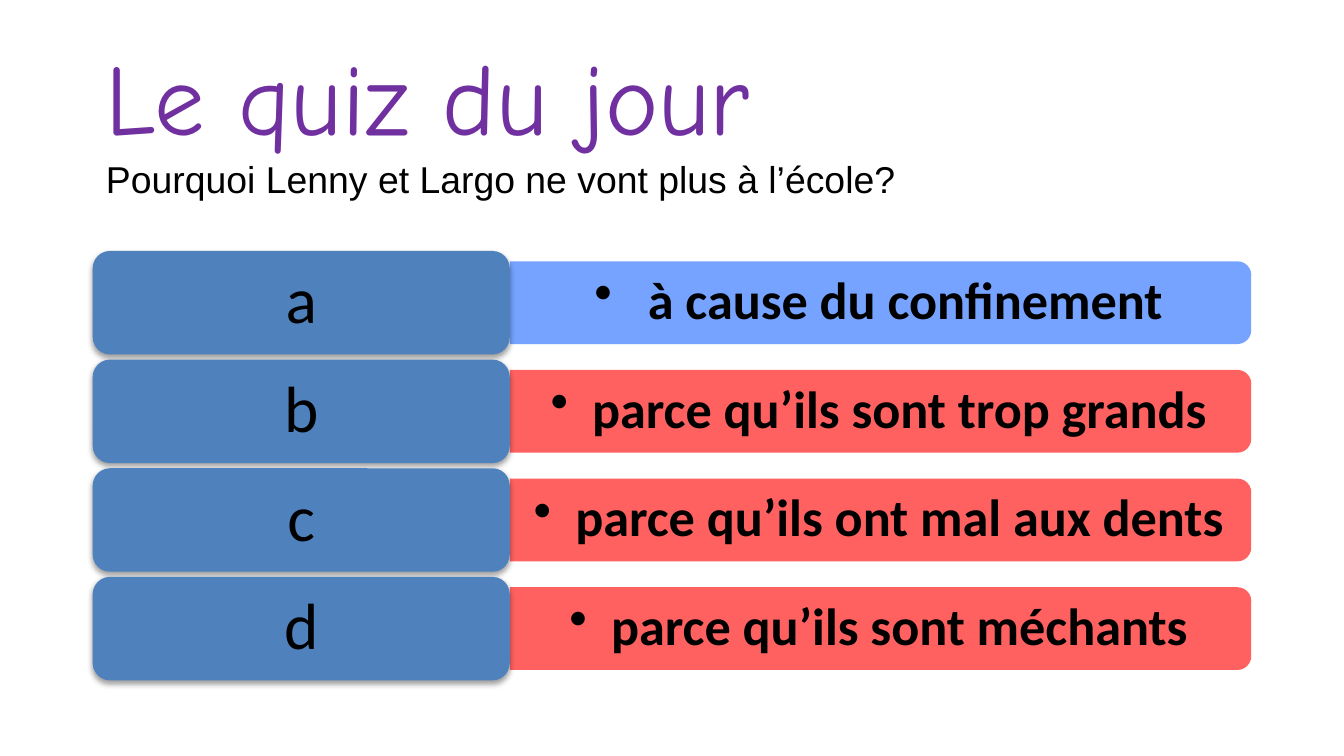
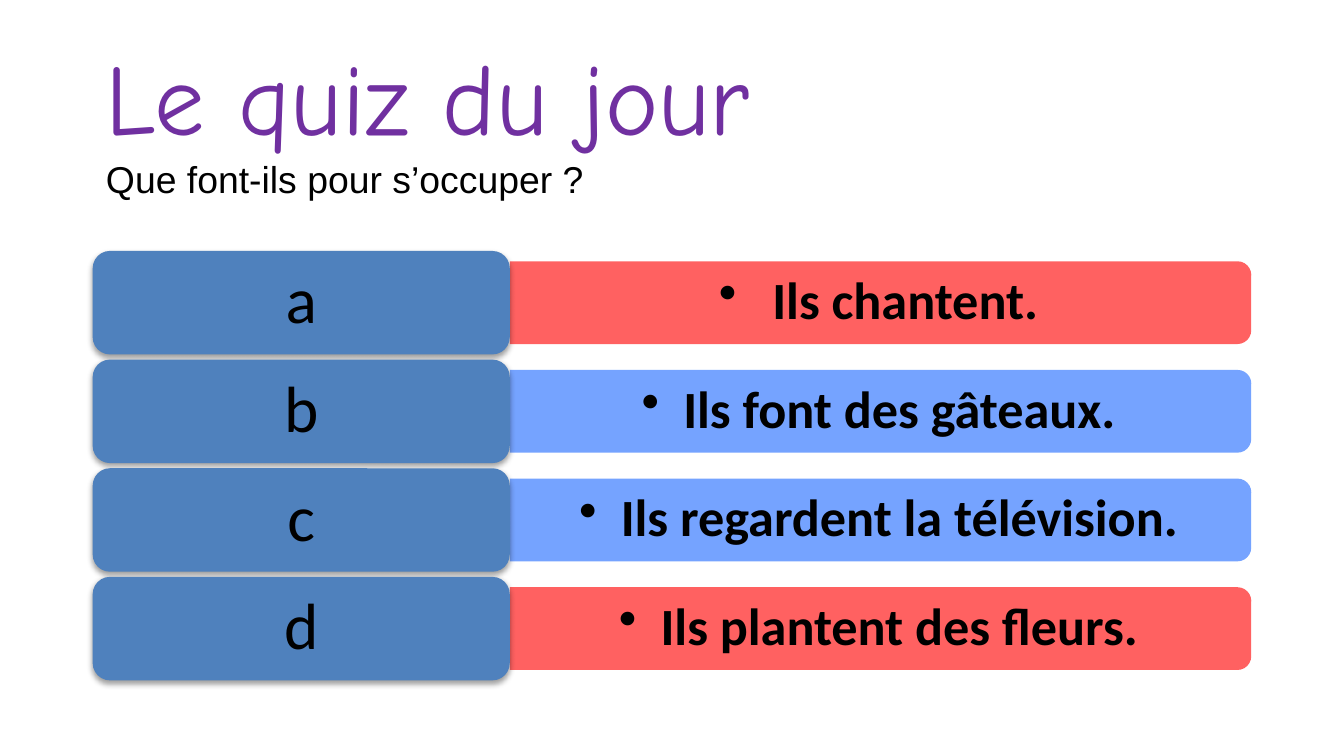
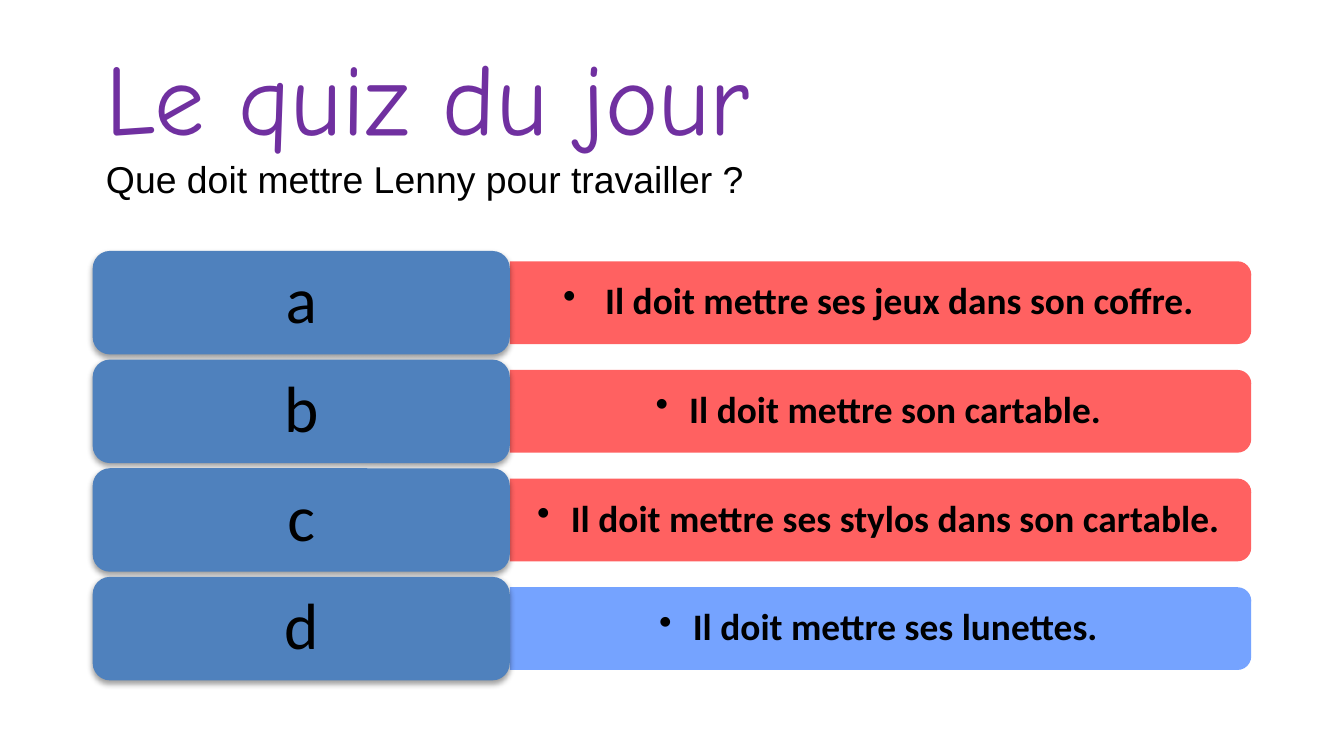
import dataclasses

import lxml.etree
import pptx
import pptx.dml.color
import pptx.enum.shapes
import pptx.enum.text
import pptx.oxml.ns
import pptx.util

Inches = pptx.util.Inches
Pt = pptx.util.Pt
RGBColor = pptx.dml.color.RGBColor
Shapes = pptx.enum.shapes.MSO_SHAPE
Align = pptx.enum.text.PP_ALIGN

PURPLE = RGBColor(0x70, 0x30, 0xA0)
BLACK = RGBColor(0x00, 0x00, 0x00)
LABEL_BLUE = RGBColor(0x4F, 0x81, 0xBD)
RIGHT_BLUE = RGBColor(0x66, 0x99, 0xFF)
WRONG_RED = RGBColor(0xFF, 0x50, 0x50)

SLIDE_WIDTH, SLIDE_HEIGHT = 10, 5.625
TITLE = "Le quiz du jour"
LETTERS = "abcd"
LABEL_SHARE = 0.36  # of the row width
BAR_SHARE = 0.8  # of the row height
GAP_SHARE = 0.05  # of the row height
LABEL_PADDING = 0.04


@dataclasses.dataclass
class Box:
    left: float
    top: float
    width: float
    height: float

    def emu(self):
        return [Inches(n) for n in (self.left, self.top, self.width, self.height)]

    def inset(self, x, y):
        return Box(self.left + x, self.top + y, self.width - 2 * x, self.height - 2 * y)

    def quarter_turned(self):
        """Box that covers this one once its shape is rotated by 90 degrees."""
        shift = (self.width - self.height) / 2
        return Box(self.left + shift, self.top - shift, self.height, self.width)


@dataclasses.dataclass
class Question:
    text: str
    answers: list
    correct: str
    size: int = 28
    inset: float = 0.12
    indent: float = 0.31


TITLE_BOX = Box(0.069 * SLIDE_WIDTH, 0.036 * SLIDE_HEIGHT,
                0.862 * SLIDE_WIDTH, 0.24 * SLIDE_HEIGHT)
ANSWERS_BOX = Box(TITLE_BOX.left, 0.332 * SLIDE_HEIGHT,
                  TITLE_BOX.width, 0.568 * SLIDE_HEIGHT)

QUESTIONS = [
    Question("Pourquoi Lenny et Largo ne vont plus à l’école?",
             [" à cause du confinement", "parce qu’ils sont trop grands",
              "parce qu’ils ont mal aux dents", "parce qu’ils sont méchants"], "a"),
    Question("Que font-ils pour s’occuper ?",
             [" Ils chantent.", "Ils font des gâteaux.",
              "Ils regardent la télévision.", "Ils plantent des fleurs."], "bc"),
    Question("Que doit mettre Lenny pour travailler ?",
             [" Il doit mettre ses jeux dans son coffre.", "Il doit mettre son cartable.",
              "Il doit mettre ses stylos dans son cartable.", "Il doit mettre ses lunettes."],
             "d", size=20, inset=0.08, indent=0.25),
]


def add_child(parent, tag, **attributes):
    child = lxml.etree.SubElement(parent, pptx.oxml.ns.qn(tag))
    for name, value in attributes.items():
        child.set(name, str(value))
    return child


def format_run(run, font, size, color, bold=False):
    run.font.name = font
    run.font.size = Pt(size)
    run.font.color.rgb = color
    run.font.bold = bold


def add_text(shapes, box, text, inset_x, inset_y):
    frame = shapes.add_textbox(*box.emu()).text_frame
    frame.word_wrap = True
    frame.vertical_anchor = pptx.enum.text.MSO_ANCHOR.MIDDLE
    frame.margin_left = frame.margin_right = Inches(inset_x)
    frame.margin_top = frame.margin_bottom = Inches(inset_y)
    frame.text = text
    return frame.paragraphs[0]


def add_row_text(shapes, box, text, size, inset, bold=False):
    paragraph = add_text(shapes, box, text, inset, inset / 2)
    paragraph.alignment = Align.CENTER
    paragraph.line_spacing = 0.9
    format_run(paragraph.runs[0], "Calibri", size, BLACK, bold)
    return paragraph


def add_filled(shapes, kind, box, color):
    shape = shapes.add_shape(kind, *box.emu())
    shape.shadow.inherit = False
    shape.fill.solid()
    shape.fill.fore_color.rgb = color
    shape.line.fill.background()
    return shape


def set_bullet(paragraph, indent):
    paragraph.level = 1
    properties = paragraph._p.get_or_add_pPr()
    properties.set("marL", str(Inches(indent)))
    properties.set("indent", str(-Inches(indent)))
    add_child(properties, "a:buChar", char="•")


def set_transparent(shape, opacity):
    color = shape._element.spPr.find(".//" + pptx.oxml.ns.qn("a:srgbClr"))
    add_child(color, "a:alpha", val=opacity * 1000)


def add_soft_shadow(shape):
    effects = shape._element.spPr.find(pptx.oxml.ns.qn("a:effectLst"))
    shadow = add_child(effects, "a:outerShdw", blurRad=Pt(3.1), dist=Pt(1.6),
                       dir=90 * 60000, rotWithShape=0)
    color = add_child(shadow, "a:srgbClr", val=BLACK)
    add_child(color, "a:alpha", val=38000)


def add_title(slide, box, question):
    paragraph = add_text(slide.shapes, box, TITLE + "\v" + question, 0.1, 0.05)
    heading, subtitle = paragraph.runs
    format_run(heading, "Comic Neue", 54, PURPLE)
    format_run(subtitle, "Arial", 20, BLACK)


def add_bar(shapes, box, answer, color, question):
    bar = add_filled(shapes, Shapes.ROUND_2_SAME_RECTANGLE, box.quarter_turned(), color)
    bar.rotation = 90
    set_transparent(bar, 90)
    text_box = Box(box.left, box.top + 0.05 * box.height, box.width - 0.03, 0.9 * box.height)
    paragraph = add_row_text(shapes, text_box, answer, question.size, question.inset, bold=True)
    set_bullet(paragraph, question.indent)


def add_label(shapes, box, letter):
    add_soft_shadow(add_filled(shapes, Shapes.ROUNDED_RECTANGLE, box, LABEL_BLUE))
    add_row_text(shapes, box.inset(LABEL_PADDING, LABEL_PADDING), letter, 35, 0.15)


def add_answers(slide, box, question):
    shapes = slide.shapes.add_group_shape().shapes
    count = len(question.answers)
    row_height = box.height / (count + GAP_SHARE * (count - 1))
    label_width = LABEL_SHARE * box.width
    bar_height = BAR_SHARE * row_height
    for row, (letter, answer) in enumerate(zip(LETTERS, question.answers)):
        top = box.top + row * row_height * (1 + GAP_SHARE)
        bar_box = Box(box.left + label_width, top + (row_height - bar_height) / 2,
                      box.width - label_width, bar_height)
        color = RIGHT_BLUE if letter in question.correct else WRONG_RED
        add_bar(shapes, bar_box, answer, color, question)
        add_label(shapes, Box(box.left, top, label_width, row_height), letter)


def main():
    presentation = pptx.Presentation()
    presentation.slide_width = Inches(SLIDE_WIDTH)
    presentation.slide_height = Inches(SLIDE_HEIGHT)
    blank = presentation.slide_layouts[6]
    for question in QUESTIONS:
        slide = presentation.slides.add_slide(blank)
        add_title(slide, TITLE_BOX, question.text)
        add_answers(slide, ANSWERS_BOX, question)
    presentation.save("out.pptx")


if __name__ == "__main__":
    main()
